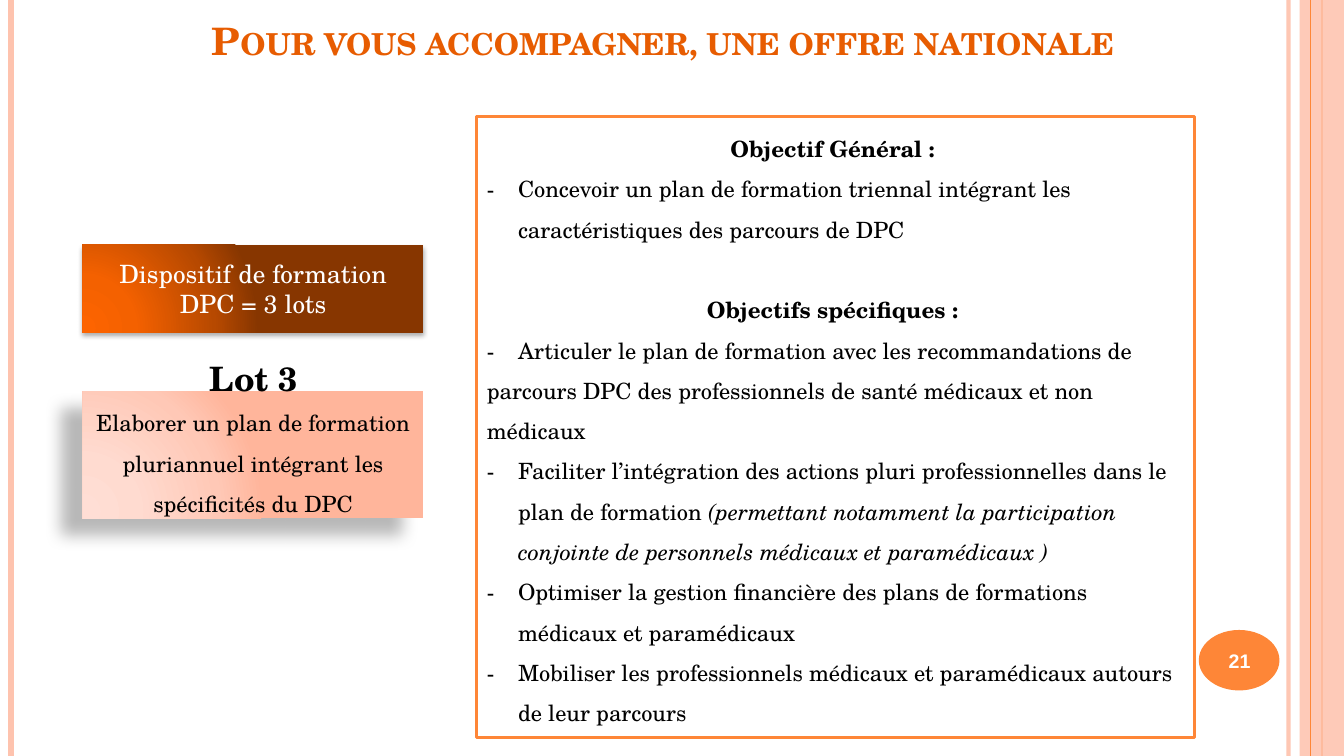
from lxml import etree
from pptx import Presentation
from pptx.dml.color import RGBColor
from pptx.enum.shapes import MSO_CONNECTOR, MSO_SHAPE
from pptx.enum.text import MSO_ANCHOR, PP_ALIGN
from pptx.oxml.ns import qn
from pptx.util import Inches, Pt

RECT, OVAL = MSO_SHAPE.RECTANGLE, MSO_SHAPE.OVAL
LINE = MSO_CONNECTOR.STRAIGHT
TOP, MID, LOW = MSO_ANCHOR.TOP, MSO_ANCHOR.MIDDLE, MSO_ANCHOR.BOTTOM
LEFT, MIDST = PP_ALIGN.LEFT, PP_ALIGN.CENTER

# Content
TITLE = "Pour vous accompagner, une offre nationale"
OFFER = "Dispositif de formation DPC = 3 lots"
LOT = "Lot 3"
AIM = "Elaborer un plan de formation pluriannuel intégrant les spécificités du DPC"
PAGE = "21"
GOALS = [  # kind, text, italic ending
    ("head", "Objectif Général : ", ""),
    ("dash", "Concevoir un plan de formation triennal intégrant les "
             "caractéristiques des parcours de DPC", ""),
    ("next", "Objectifs spécifiques : ", ""),
    ("flat", "-\tArticuler le plan de formation avec les recommandations de "
             "parcours DPC des professionnels de santé médicaux et non médicaux", ""),
    ("dash", "Faciliter l’intégration des actions pluri professionnelles dans le "
             "plan de formation",
     " (permettant notamment la participation conjointe de personnels "
     "médicaux et paramédicaux )"),
    ("dash", "Optimiser la gestion financière des plans de formations "
             "médicaux et paramédicaux", ""),
    ("dash", "Mobiliser les professionnels médicaux et paramédicaux autours "
             "de leur parcours", ""),
]

# Look
HUE = {"black": "000000", "white": "FFFFFF", "title": "E75C01",
       "orange": "FE8637", "peach": "FEC3AE"}
STOPS = (0, 30, 75, 100)
DARK = ("FD6400", "F46100", "B74900", "873600")
PALE = ("FFDED5", "FFDBD0", "FFC8B6", "FFB59B")
SERIF, SANS = "TeX Gyre Schola", "Arial"

# Grid: slide size, side column, goals column
W, H = 13.33, 7.5
SIDE, SPAN = 0.82, 3.38
MAIN, WIDE = 4.73, 7.12
HANG = 0.31
RAILS = [  # x, colour, points, opacity
    (12.78, "peach", 3, 93), (0.11, "peach", 4.5, 100),
    (13.11, "orange", 1.5, 100), (13, "orange", 0.75, 100),
]

deck = Presentation()
deck.slide_width, deck.slide_height = Inches(W), Inches(H)
slide = deck.slides.add_slide(deck.slide_layouts[6])
shapes = slide.shapes


def sub(node, tag, **attrs):
    child = etree.SubElement(node, qn(tag))
    for key, val in attrs.items():
        child.set(key, str(val))
    return child


def fade(fill, share):
    color = fill._xPr.find(qn("a:solidFill"))[0]
    sub(color, "a:alpha", val=share * 1000)


def rail(x, hue, size, share):
    line = shapes.add_connector(LINE, Inches(x), 0, Inches(x), Inches(H))
    line.line.color.rgb = RGBColor.from_string(HUE[hue])
    line.line.width = Pt(size)
    if share < 100:
        fade(line.line.fill, share)
    sub(line._element.spPr, "a:effectLst")


def block(kind, box, hue, edge=None):
    shape = shapes.add_shape(kind, *map(Inches, box))
    shape.fill.solid()
    shape.fill.fore_color.rgb = RGBColor.from_string(HUE[hue])
    if edge:
        shape.line.color.rgb = RGBColor.from_string(HUE[edge])
        shape.line.width = Pt(2)
    else:
        shape.line.fill.background()
    shape.shadow.inherit = False
    return shape


def glow(shape, tints, blur, dist, angle, share):
    """Radial gradient and soft shadow."""
    props = shape._element.spPr
    grad = etree.Element(qn("a:gradFill"), rotWithShape="1")
    stops = sub(grad, "a:gsLst")
    for pos, tint in zip(STOPS, tints):
        sub(sub(stops, "a:gs", pos=pos * 1000), "a:srgbClr", val=tint)
    way = sub(grad, "a:path", path="circle")
    sub(way, "a:fillToRect", l=5000, t=100000, r=120000, b=10000)
    props.replace(props.find(qn("a:solidFill")), grad)
    shade = sub(props.find(qn("a:effectLst")), "a:outerShdw", blurRad=Pt(blur),
                dist=Pt(dist), dir=angle * 60000, algn="ctr", rotWithShape=0)
    color = sub(shade, "a:srgbClr", val=HUE["black"])
    sub(color, "a:alpha", val=share * 1000)


def style(para, size, hue="black", bold=False, font=SERIF):
    for run in para.runs:
        run.font.name, run.font.size, run.font.bold = font, Pt(size), bold
        run.font.color.rgb = RGBColor.from_string(HUE[hue])


def write(shape, text, size, anchor=TOP, **look):
    frame = shape.text_frame
    frame.word_wrap, frame.vertical_anchor = True, anchor
    frame.text = text
    para = frame.paragraphs[0]
    para.alignment = MIDST
    style(para, size, **look)
    return para


def label(box, text, size, anchor=TOP, **look):
    return write(shapes.add_textbox(*map(Inches, box)), text, size, anchor, **look)


# Side rails, right band and page number
for item in RAILS[:3]:
    rail(*item)
band = block(RECT, (12.89, 0, W - 12.89, H), "peach")
fade(band.fill, 87)
rail(*RAILS[3])
block(OVAL, (11.89, 6.25, 0.8, 0.6), "orange")
label((11.85, 6.27, 0.89, 0.57), PAGE, 14, MID, hue="white", bold=True, font=SANS)

# Lot 3 and its aim
aim = block(RECT, (SIDE, 3.88, SPAN, 1.26), "peach")
glow(aim, PALE, 11.8, 19.7, 141, 28)
write(aim, AIM, 16).line_spacing = 1.5
label((1.92, 3.5, 1.19, 0.5), LOT, 24, bold=True)

# Title
title = label((1.13, 0.11, 10.89, 0.57), TITLE, 27, LOW, hue="title", bold=True)
title.runs[0].font._element.set("cap", "small")

# Training offer
offer = block(RECT, (SIDE, 2.43, SPAN, 0.87), "orange")
glow(offer, DARK, 3.5, 2.2, 90, 32)
write(offer, OFFER, 18, MID, hue="white")

# Goals
frame = block(RECT, (MAIN, 1.16, WIDE, 6.16), "white", "orange").text_frame
frame.word_wrap, frame.vertical_anchor = True, TOP
for i, (kind, text, tail) in enumerate(GOALS):
    para = frame.add_paragraph() if i else frame.paragraphs[0]
    head = kind in ("head", "next")
    para.alignment = MIDST if head else LEFT
    para.line_spacing = 1.5
    if kind == "next":
        para.space_before = Pt(28.8)
    props = para._p.get_or_add_pPr()
    if kind == "dash":
        props.set("marL", str(Inches(HANG)))
        props.set("indent", str(-Inches(HANG)))
        sub(props, "a:buFont", typeface=SERIF)
        sub(props, "a:buChar", char="-")
    elif kind == "flat":
        sub(sub(props, "a:tabLst"), "a:tab", pos=Inches(HANG), algn="l")
    para.add_run().text = text
    if tail:
        run = para.add_run()
        run.text, run.font.italic = tail, True
    style(para, 16, bold=head)

deck.save("out.pptx")
